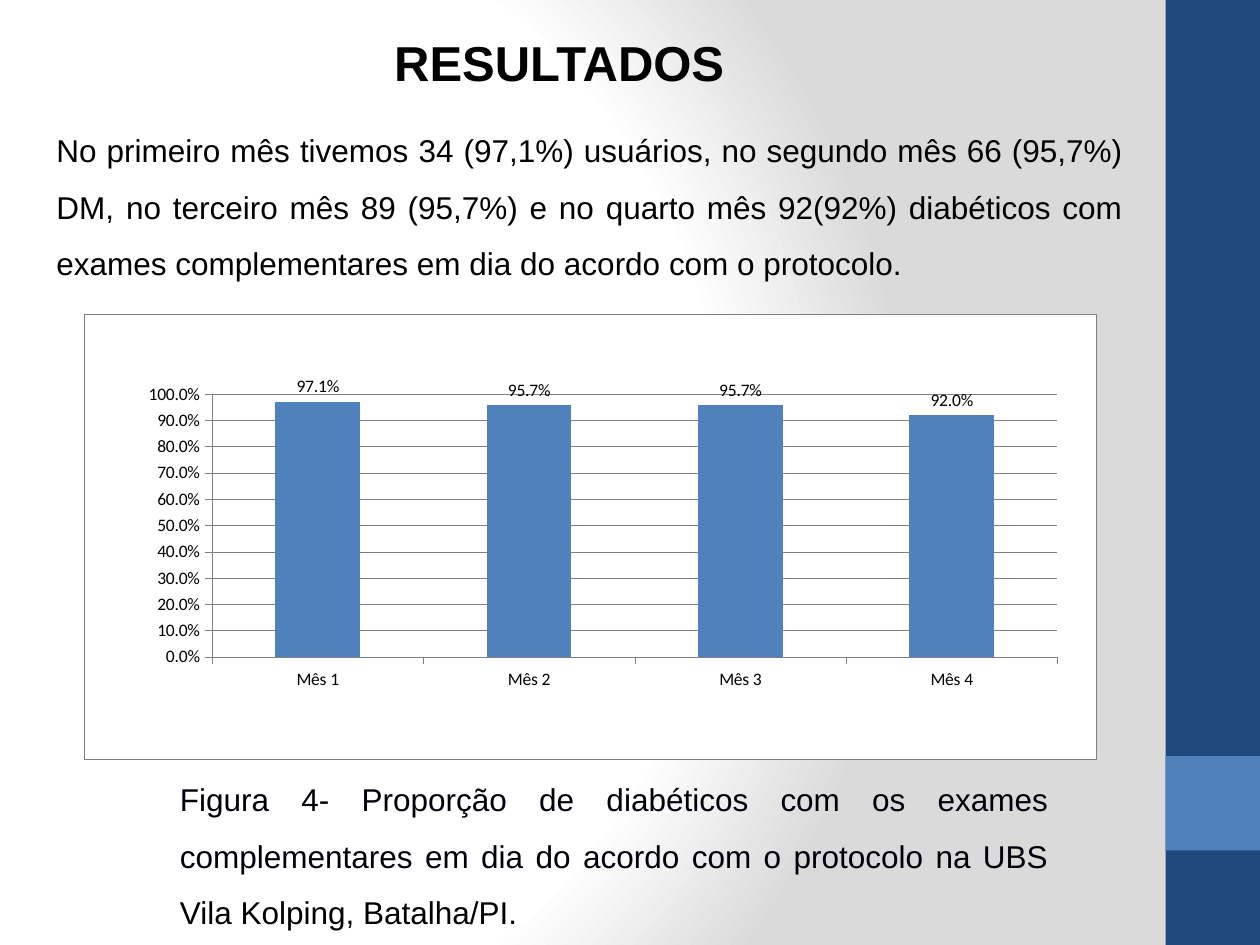
from pptx import Presentation
from pptx import util as u
from pptx.chart.data import CategoryChartData
from pptx.dml.color import RGBColor
from pptx.enum import chart as ch, shapes, text
from pptx.oxml import parse_xml
from pptx.oxml.ns import nsdecls, qn

COLORS = {"navy": "1F497D", "blue": "4F81BD", "black": "000000", "ink": "00000A",
          "white": "FFFFFF", "silver": "DADADA", "gray": "808080"}
W, H = 10, 7.5
BAND = 0.75  # width of the side band and height of its accent


def rgb(name):
    return RGBColor.from_string(COLORS[name])


def set_font(font, **values):
    font.color.rgb = rgb(values.pop("color", "black"))
    for key, value in values.items():
        setattr(font, key, value)


prs = Presentation()
prs.slide_width, prs.slide_height = u.Inches(W), u.Inches(H)
s = prs.slides.add_slide(prs.slide_layouts[6])

# Background: radial gradient from white to silver
s.background.fill.gradient()
old = s.background._cSld.find(".//" + qn("a:gradFill"))
stops = "".join(f'<a:gs pos="{pos * 1000}"><a:srgbClr val="{COLORS[c]}"/></a:gs>'
                for pos, c in ((0, "white"), (75, "white"), (100, "silver")))
old.getparent().replace(old, parse_xml(
    f'<a:gradFill {nsdecls("a")} rotWithShape="1"><a:gsLst>{stops}</a:gsLst><a:path path="circle">'
    '<a:fillToRect l="20000" t="50000" r="100000" b="50000"/></a:path></a:gradFill>'))

# Side band with its accent square
for top, height, color in ((0, H, "navy"), (0.8 * H, BAND, "blue")):
    sp = s.shapes.add_shape(shapes.MSO_SHAPE.RECTANGLE, u.Inches(W - BAND), u.Inches(top),
                            u.Inches(BAND), u.Inches(height))
    sp.shadow.inherit = False
    sp.fill.solid()
    sp.fill.fore_color.rgb = rgb(color)
    sp.line.fill.background()

# Chart
data = CategoryChartData(number_format="0.0%")
data.categories = [f"Mês {n}" for n in range(1, 5)]
data.add_series("Series 1", (0.971, 0.957, 0.957, 0.92))
chart = s.shapes.add_chart(ch.XL_CHART_TYPE.COLUMN_CLUSTERED, u.Inches(0.67), u.Inches(2.49),
                           u.Inches(8.03), u.Inches(3.54), data).chart
chart.has_legend = chart.has_title = False
set_font(chart.font, size=u.Pt(10), name="Calibri")

plot = chart.plots[0]
plot.vary_by_categories = False
plot.gap_width = 150
bars = plot.series[0]
bars.format.fill.solid()
bars.format.fill.fore_color.rgb = rgb("blue")
labels = bars.data_labels
for key, value in {"show_value": True, "number_format": "0.0%", "number_format_is_linked": False,
                   "position": ch.XL_LABEL_POSITION.OUTSIDE_END}.items():
    setattr(labels, key, value)
set_font(labels.font, size=u.Pt(10), name="Calibri")

value_axis = chart.value_axis
for key, value in {"minimum_scale": 0, "maximum_scale": 1, "major_unit": 0.1,
                   "has_major_gridlines": True}.items():
    setattr(value_axis, key, value)
value_axis.tick_labels.number_format = "0.0%"
value_axis.tick_labels.number_format_is_linked = False
for axis in (chart.category_axis, value_axis):
    axis.major_tick_mark = ch.XL_TICK_MARK.OUTSIDE
    set_font(axis.tick_labels.font, size=u.Pt(10), name="Calibri")
for part in (chart.category_axis, value_axis, value_axis.major_gridlines):
    part.format.line.color.rgb = rgb("gray")
    part.format.line.width = u.Pt(0.25)

# Chart frame, plot fill and fixed plot position
fill = f'<a:solidFill><a:srgbClr val="{COLORS["white"]}"/></a:solidFill>'
border = f'<a:ln w="3175"><a:solidFill><a:srgbClr val="{COLORS["gray"]}"/></a:solidFill></a:ln>'
root = chart._chartSpace
area = root.find(".//" + qn("c:plotArea"))
root.find(qn("c:chart")).addnext(
    parse_xml(f'<c:spPr {nsdecls("c", "a")}>{fill}{border}</c:spPr>'))
area.append(parse_xml(f'<c:spPr {nsdecls("c", "a")}>{fill}<a:ln><a:noFill/></a:ln></c:spPr>'))
for layout in area.findall(qn("c:layout")):
    area.remove(layout)
box = "".join(f'<c:{tag} val="{val}"/>' for tag, val in (
    ("layoutTarget", "inner"), ("xMode", "edge"), ("yMode", "edge"),
    ("x", 0.126), ("y", 0.18), ("w", 0.836), ("h", 0.59)))
area.insert(0, parse_xml(
    f'<c:layout {nsdecls("c")}><c:manualLayout>{box}</c:manualLayout></c:layout>'))

# Texts: place, runs with colours, font values, paragraph values, left and right margins
BODY = {"size": u.Pt(18), "name": "Arial"}
JUSTIFIED = {"alignment": text.PP_ALIGN.JUSTIFY, "line_spacing": 1.5}
TEXTS = (
    ((0.35, 0.84, 8.66, 1.46),
     (("No primeiro mês tivemos 34 (97,1%) usuários, no segundo mês 66 (95,7%) DM, no terceiro "
       "mês 89 (95,7%) e no quarto mês 92(92%) diabéticos com exames complementares em dia do "
       "acordo com o protocolo. ", "black"),), BODY, JUSTIFIED, (0, 0)),
    ((0.35, 5.99, 8.66, 1.46),
     (("Figura 4- Proporção de diabéticos com os exames complementares em dia do acordo com o "
       "protocolo na UBS", "ink"), (" Vila Kolping, Batalha/PI.", "black")),
     BODY, JUSTIFIED, (0.98, 0.59)),
    ((3.03, 0.21, 2.99, 0.57), (("RESULTADOS", "black"),),
     {"size": u.Pt(28), "name": "Arial", "bold": True}, {}, (0, 0)),
)
for place, runs, font, para, margins in TEXTS:
    tf = s.shapes.add_textbox(*map(u.Inches, place)).text_frame
    tf.word_wrap = True
    tf.auto_size = text.MSO_AUTO_SIZE.SHAPE_TO_FIT_TEXT
    p = tf.paragraphs[0]
    for key, value in para.items():
        setattr(p, key, value)
    for key, value in zip(("marL", "marR"), margins):
        p._p.get_or_add_pPr().set(key, str(u.Inches(value)))
    for words, color in runs:
        r = p.add_run()
        r.text = words
        set_font(r.font, color=color, **font)

prs.save("out.pptx")
